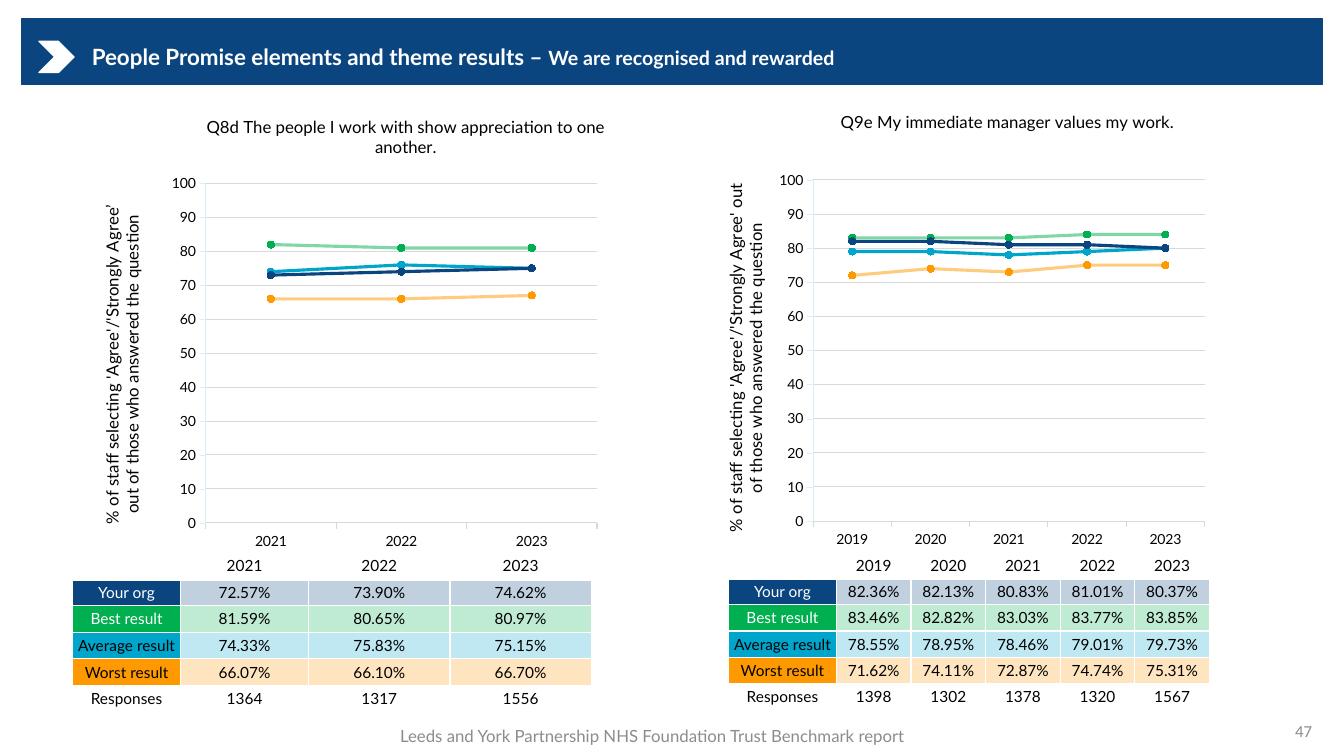
from lxml.etree import SubElement
from pptx import Presentation
from pptx.chart.data import CategoryChartData
from pptx.dml.color import RGBColor
from pptx.enum.chart import XL_CHART_TYPE as ChartType, XL_MARKER_STYLE as Marker, XL_TICK_MARK as Tick
from pptx.enum.shapes import MSO_SHAPE as Shape
from pptx.enum.text import MSO_ANCHOR as Anchor, PP_ALIGN as Align
from pptx.oxml.ns import qn
from pptx.util import Cm, Pt

NAVY, GREEN, TEAL, ORANGE = "0B457F", "00B050", "00A5CC", "FF9900"
WHITE, BLACK, GREY, GRID, AXIS = "FFFFFF", "000000", "8C8C8C", "D9D9D9", "DBEFF9"

HEADING = [("People Promise elements and theme results – ", 16), ("We are recognised and rewarded", 14)]
HEADING_AREA = (2.06, 0.9, 24.41, 1.12)
BANNER = [
    (Shape.RECTANGLE, (0.54, 0.48, 32.79, 1.66), NAVY),
    (Shape.CHEVRON, (0.98, 1.04, 0.89, 0.79), WHITE),
]
NOTES = [
    ("47", (25.7, 17.91, 7.62, 1.02), Align.RIGHT, "Calibri"),
    ("Leeds and York Partnership NHS Foundation Trust Benchmark report", (7.49, 18.04, 17.91, 0.99), Align.CENTER, "Lato"),
]
GROUPS = [
    ("Your org", NAVY, WHITE, 100),
    ("Best result", GREEN, WHITE, 50),
    ("Average result", TEAL, BLACK, 100),
    ("Worst result", ORANGE, BLACK, 50),
]
DRAW_ORDER = (2, 1, 3, 0)
QUESTIONS = [
    {
        "title": "Q8d The people I work with show appreciation to one another.",
        "title_at": (0.2, 0.02),
        "axis": "% of staff selecting 'Agree'/'Strongly Agree’\nout of those who answered the question",
        "axis_at": (0, 0.22),
        "chart_area": (2.44, 2.59, 13.44, 11.3),
        "plot": (0.204, 0.18, 0.734, 0.757),
        "table_at": (1.83, 13.92),
        "columns": (2.72, 3.23, 3.56, 3.56),
        "row_height": 0.67,
        "years": ("2021", "2022", "2023"),
        "results": [(72.57, 73.90, 74.62), (81.59, 80.65, 80.97), (74.33, 75.83, 75.15), (66.07, 66.10, 66.70)],
        "responses": (1364, 1317, 1556),
    },
    {
        "title": "Q9e My immediate manager values my work.",
        "title_at": (0.25, 0.03),
        "axis": "% of staff selecting 'Agree'/'Strongly Agree' out of those who answered the question",
        "axis_at": (0.03, 0.2),
        "chart_area": (17.75, 2.34, 13.44, 11.46),
        "plot": (0.204, 0.193, 0.734, 0.756),
        "table_at": (18.36, 13.92),
        "columns": (2.72,) + (1.88,) * 5,
        "row_height": 0.66,
        "years": ("2019", "2020", "2021", "2022", "2023"),
        "results": [
            (82.36, 82.13, 80.83, 81.01, 80.37),
            (83.46, 82.82, 83.03, 83.77, 83.85),
            (78.55, 78.95, 78.46, 79.01, 79.73),
            (71.62, 74.11, 72.87, 74.74, 75.31),
        ],
        "responses": (1398, 1302, 1378, 1320, 1567),
    },
]


def cm(values):
    return [Cm(value) for value in values]


def set_values(target, **values):
    for name, value in values.items():
        setattr(target, name, value)


def color(text):
    return RGBColor.from_string(text)


def style(font, size, shade=BLACK, bold=False, name="Lato"):
    set_values(font, size=Pt(size), bold=bold, name=name)
    font.color.rgb = color(shade)


def paint(fill, shade, opacity=100):
    fill.solid()
    fill.fore_color.rgb = color(shade)
    if opacity < 100:
        node = fill._xPr.findall(".//" + qn("a:srgbClr"))[-1]
        SubElement(node, qn("a:alpha"), val=str(opacity * 1000))


def draw_line(line, shade, width, opacity=100):
    line.width = Pt(width)
    paint(line.fill, shade, opacity)


def set_layout(parent, index, **values):
    layout = parent.find(qn("c:layout"))
    if layout is None:
        layout = SubElement(parent, qn("c:layout"))
        parent.insert(index, layout)
    manual = SubElement(layout, qn("c:manualLayout"))
    for name, value in values.items():
        SubElement(manual, qn("c:" + name), val=str(value))


def add_chart_text(title, text, place, rotation):
    title.text_frame.text = text
    for para in title.text_frame.paragraphs:
        for span in para.runs:
            style(span.font, 12)
    title.element.find(".//" + qn("a:bodyPr")).set("rot", str(rotation * 60000))
    set_layout(title.element, 1, xMode="edge", yMode="edge", x=place[0], y=place[1])


def add_result_chart(page, question):
    data = CategoryChartData()
    data.categories = question["years"]
    for index in DRAW_ORDER:
        data.add_series(GROUPS[index][0], [round(value) for value in question["results"][index]])
    chart = page.shapes.add_chart(ChartType.LINE_MARKERS, *cm(question["chart_area"]), data).chart
    set_values(chart, has_legend=False, has_title=True)
    style(chart.font, 10)
    add_chart_text(chart.chart_title, question["title"], question["title_at"], 0)
    values, years = chart.value_axis, chart.category_axis
    for axis, shade, width in ((values, AXIS, 0.25), (years, GRID, 0.75)):
        set_values(axis, major_tick_mark=Tick.OUTSIDE, minor_tick_mark=Tick.NONE)
        style(axis.tick_labels.font, 10)
        draw_line(axis.format.line, shade, width)
    set_values(values, minimum_scale=0, maximum_scale=100, major_unit=10, has_major_gridlines=True)
    set_values(values.tick_labels, number_format="0", number_format_is_linked=False)
    draw_line(values.major_gridlines.format.line, GRID, 0.75)
    add_chart_text(values.axis_title, question["axis"], question["axis_at"], -90)
    left, top, width, height = question["plot"]
    area = chart.element.find(".//" + qn("c:plotArea"))
    set_layout(area, 0, layoutTarget="inner", xMode="edge", yMode="edge", x=left, y=top, w=width, h=height)
    chart.plots[0].vary_by_categories = False
    for series, index in zip(chart.plots[0].series, DRAW_ORDER):
        _, shade, _, opacity = GROUPS[index]
        series.smooth = False
        draw_line(series.format.line, shade, 2.25, opacity)
        set_values(series.marker, style=Marker.CIRCLE, size=5)
        paint(series.marker.format.fill, shade)
        draw_line(series.marker.format.line, shade, 0.75)


def fill_cell(cell, text, ink, shade, opacity, bottom):
    set_values(cell, margin_left=0, margin_right=0, margin_top=0, margin_bottom=0, vertical_anchor=Anchor.MIDDLE)
    para = cell.text_frame.paragraphs[0]
    para.alignment = Align.CENTER
    if text:
        span = para.add_run()
        span.text = text
        style(span.font, 11, ink)
    SubElement(para._p, qn("a:endParaRPr"), sz="1100")
    for side, width in (("L", 1), ("R", 1), ("T", 1), ("B", bottom)):
        border = SubElement(cell._tc.get_or_add_tcPr(), qn("a:ln" + side), w=str(Pt(width)))
        SubElement(SubElement(border, qn("a:solidFill")), qn("a:srgbClr"), val=WHITE)
    if shade:
        paint(cell.fill, shade, opacity)
    else:
        cell.fill.background()


def add_result_table(page, question):
    rows = [(("", *question["years"]), None, BLACK)]
    for (label, shade, ink, _), results in zip(GROUPS, question["results"]):
        rows.append(((label, *(f"{value:.2f}%" for value in results)), shade, ink))
    rows.append((("Responses", *map(str, question["responses"])), None, BLACK))
    columns, height = question["columns"], question["row_height"]
    size = cm((sum(columns), height * len(rows)))
    table = page.shapes.add_table(len(rows), len(columns), *cm(question["table_at"]), *size).table
    set_values(table, first_row=False, horz_banding=False)
    for column, width in zip(table.columns, columns):
        column.width = Cm(width)
    for r, (texts, shade, ink) in enumerate(rows):
        table.rows[r].height = Cm(height)
        for c, text in enumerate(texts):
            fill_cell(table.cell(r, c), text, BLACK if c else ink, shade, 25 if c else 100, 1 if r else 3)


def add_heading(page):
    for kind, area, shade in BANNER:
        shape = page.shapes.add_shape(kind, *cm(area))
        shape.shadow.inherit = False
        paint(shape.fill, shade)
        draw_line(shape.line, shade, 0.75)
    box = page.shapes.title
    box.element.getparent().append(box.element)
    set_values(box, **dict(zip(("left", "top", "width", "height"), cm(HEADING_AREA))))
    set_values(box.text_frame, word_wrap=True, vertical_anchor=Anchor.MIDDLE)
    para = box.text_frame.paragraphs[0]
    set_values(para, alignment=Align.LEFT, line_spacing=0.9)
    for text, size in HEADING:
        span = para.add_run()
        span.text = text
        style(span.font, size, WHITE, True)


def add_note(page, text, area, alignment, name):
    frame = page.shapes.add_textbox(*cm(area)).text_frame
    set_values(frame, word_wrap=True, vertical_anchor=Anchor.MIDDLE)
    para = frame.paragraphs[0]
    para.alignment = alignment
    span = para.add_run()
    span.text = text
    style(span.font, 12, GREY, name=name)


def main():
    deck = Presentation()
    set_values(deck, slide_width=Cm(33.87), slide_height=Cm(19.05))
    page = deck.slides.add_slide(deck.slide_layouts[5])
    add_heading(page)
    for question in QUESTIONS:
        add_result_chart(page, question)
        add_result_table(page, question)
    for note in NOTES:
        add_note(page, *note)
    deck.save("out.pptx")


if __name__ == "__main__":
    main()
